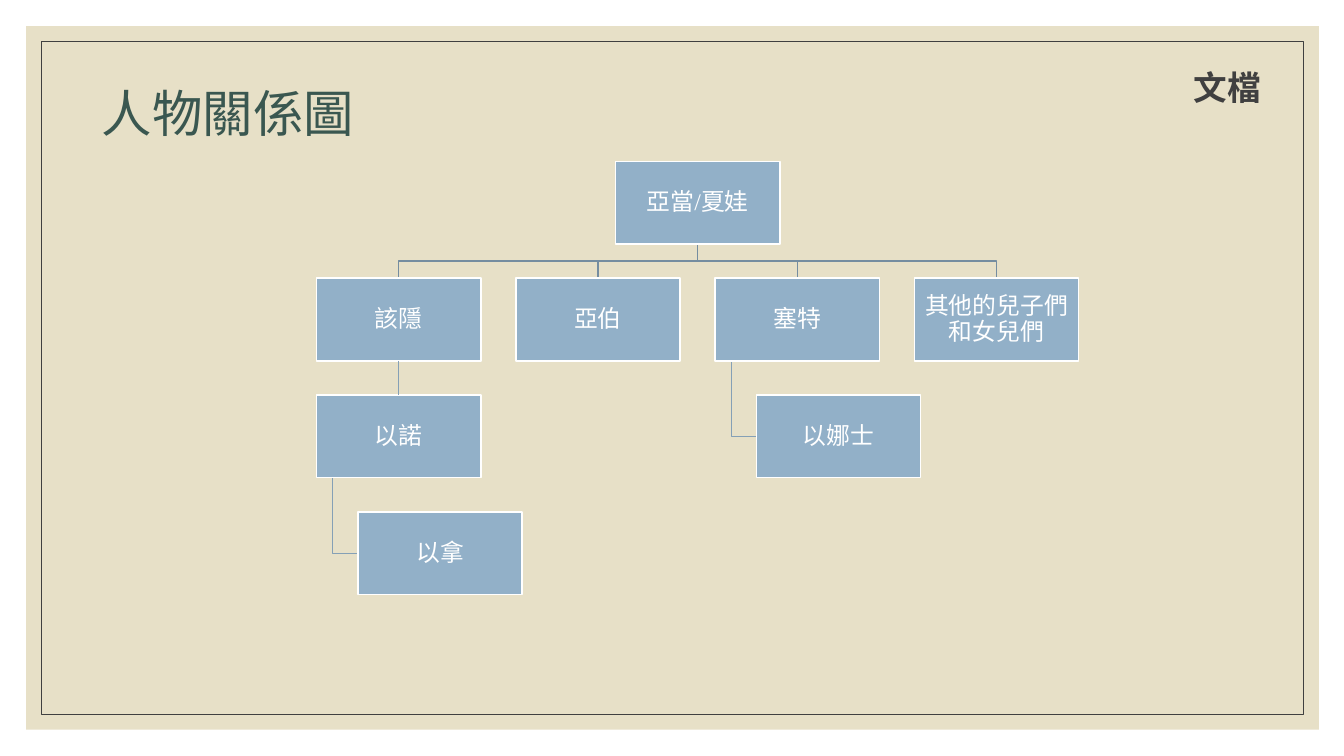
from lxml.etree import SubElement
from pptx import Presentation
from pptx.dml.color import RGBColor
from pptx.enum.shapes import MSO_CONNECTOR, MSO_SHAPE
from pptx.enum.text import MSO_ANCHOR as Anchor, MSO_AUTO_SIZE as AutoSize, PP_ALIGN as Align
from pptx.oxml.ns import qn
from pptx.util import Inches, Pt

COLORS = {"panel": "E7E0C7", "dark": "404040", "title": "3A5750", "box": "92B0C8",
          "white": "FFFFFF", "upper": "758DA0", "lower": "85A0B6"}
BOX_WIDTH, BOX_HEIGHT = 1.63, 0.82
FIRST_LEFT, COLUMN_STEP = 3.14, (9.07 - 3.14) / 3
FIRST_TOP, ROW_STEP = 1.6, 1.16
INDENT, STEM = 0.41, 0.16


class FamilyPage:
    """Holds the colours and the slide, and draws each kind of element."""

    def __init__(self, deck):
        self.page = deck.slides.add_slide(deck.slide_layouts[5])
        self.shapes = self.page.shapes

    def color(self, name):
        return RGBColor.from_string(COLORS[name])

    def rectangle(self, left, top, width, height, fill=None, line=None, weight=1):
        box = self.shapes.add_shape(MSO_SHAPE.RECTANGLE, *map(Inches, (left, top, width, height)))
        box.shadow.inherit = False
        if fill:
            box.fill.solid()
            box.fill.fore_color.rgb = self.color(fill)
        else:
            box.fill.background()
        if line:
            box.line.color.rgb = self.color(line)
            box.line.width = Pt(weight)
        else:
            box.line.fill.background()
        return box

    def set_text(self, box, text, size, font, color, align, spacing=0.9, bold=False, **frame_format):
        frame = box.text_frame
        for name, value in frame_format.items():
            setattr(frame, name, value)
        para = frame.paragraphs[0]
        para.alignment, para.line_spacing = align, spacing
        span = para.add_run()
        span.text = text
        for name, value in {"size": Pt(size), "name": font, "bold": bold}.items():
            setattr(span.font, name, value)
        span.font.color.rgb = self.color(color)

    def title(self, text):
        title = self.shapes.title
        title.element.getparent().append(title.element)
        place = {"left": 0.91, "top": 0.4, "width": 11, "height": 1.5}
        for name, value in place.items():
            setattr(title, name, Inches(value))
        self.set_text(title, text, 36, "Calibri", "title", Align.LEFT,
                      vertical_anchor=Anchor.MIDDLE, auto_size=AutoSize.NONE)

    def label(self, text):
        box = self.shapes.add_textbox(*map(Inches, (11.73, 0.61, 0.88, 0.5)))
        self.set_text(box, text, 24, "Times New Roman", "dark", Align.CENTER, spacing=1.0, bold=True,
                      word_wrap=False, auto_size=AutoSize.SHAPE_TO_FIT_TEXT)

    def person(self, text, column, row, indent=0):
        box = self.rectangle(FIRST_LEFT + column * COLUMN_STEP + indent, FIRST_TOP + row * ROW_STEP,
                             BOX_WIDTH, BOX_HEIGHT, "box", "white")
        margins = {f"margin_{side}": Inches(0.01) for side in ("left", "top", "right", "bottom")}
        self.set_text(box, text, 17, "Times New Roman", "white", Align.CENTER,
                      vertical_anchor=Anchor.MIDDLE, word_wrap=True, **margins)
        return box

    def elbow(self, points, color):
        builder = self.shapes.build_freeform(*map(Inches, points[0]))
        builder.add_line_segments([tuple(map(Inches, point)) for point in points[1:]], close=False)
        bend = builder.convert_to_shape()
        bend.shadow.inherit = False
        bend.fill.background()
        bend.line.color.rgb = self.color(color)
        bend.line.width = Pt(1)

    def branch(self, column):
        start = FIRST_LEFT + 1.5 * COLUMN_STEP + BOX_WIDTH / 2
        end = FIRST_LEFT + column * COLUMN_STEP + BOX_WIDTH / 2
        top, bottom = FIRST_TOP + BOX_HEIGHT, FIRST_TOP + ROW_STEP
        middle = (top + bottom) / 2
        self.elbow([(start, top), (start, middle), (end, middle), (end, bottom)], "upper")

    def hang(self, column, row):
        left = FIRST_LEFT + column * COLUMN_STEP
        top = FIRST_TOP + row * ROW_STEP + BOX_HEIGHT
        bottom = FIRST_TOP + (row + 1) * ROW_STEP + BOX_HEIGHT / 2
        self.elbow([(left + STEM, top), (left + STEM, bottom), (left + INDENT, bottom)], "lower")

    def join(self, parent, child):
        link = self.shapes.add_connector(MSO_CONNECTOR.STRAIGHT, 0, 0, 0, 0)
        link.begin_connect(parent, 2)
        link.end_connect(child, 0)
        link.line.color.rgb = self.color("lower")
        link.line.width = Pt(1)
        SubElement(link.element.spPr, qn("a:effectLst"))


def main():
    deck = Presentation()
    deck.slide_width, deck.slide_height = Inches(13.33), Inches(7.5)
    family = FamilyPage(deck)
    family.rectangle(0.26, 0.26, 12.82, 6.98, fill="panel")
    family.rectangle(0.41, 0.41, 12.52, 6.68, line="dark", weight=0.5)

    children = ["該隱", "亞伯", "塞特", "其他的兒子們和女兒們"]
    for column in range(len(children)):
        family.branch(column)
    family.hang(2, 1)
    family.hang(0, 2)

    family.person("亞當/夏娃", 1.5, 0)
    boxes = [family.person(name, column, 1) for column, name in enumerate(children)]
    grandson = family.person("以諾", 0, 2)
    family.person("以拿", 0, 3, INDENT)
    family.person("以娜士", 2, 2, INDENT)
    family.join(boxes[0], grandson)

    family.title("人物關係圖")
    family.label("文檔")
    deck.save("out.pptx")


if __name__ == "__main__":
    main()
